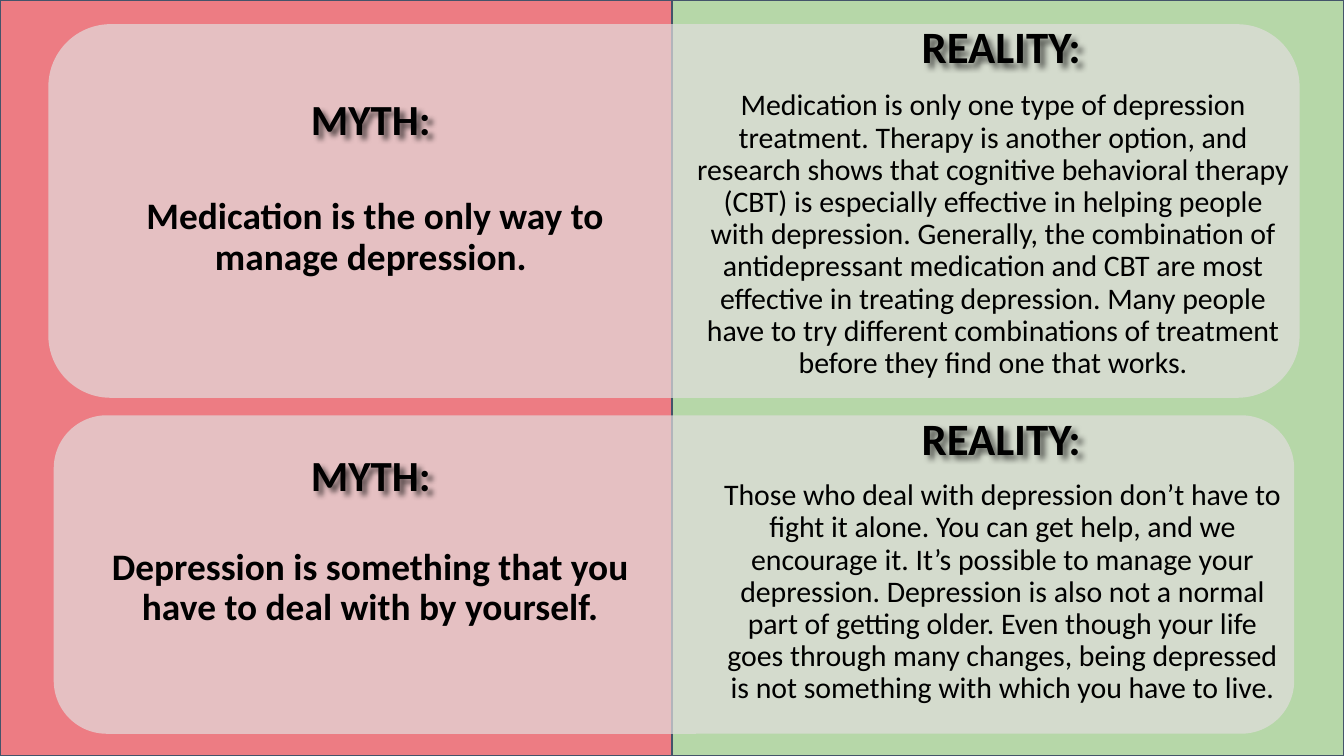
import pptx
import pptx.util
import pptx.dml.color
import pptx.enum.shapes
import pptx.enum.text
import pptx.oxml
import pptx.oxml.ns

Inches, Pt = pptx.util.Inches, pptx.util.Pt
SHAPE = pptx.enum.shapes.MSO_SHAPE
NS = pptx.oxml.ns.nsdecls("a")


def rgb(value):
    return pptx.dml.color.RGBColor.from_string(value)


def write(sp, box, text, size, bold, spacing, margin=0):
    sp.left, sp.top, sp.width, sp.height = [Inches(v) for v in box]
    tf = sp.text_frame
    tf.word_wrap = True
    tf.auto_size = pptx.enum.text.MSO_AUTO_SIZE.NONE
    tf.vertical_anchor = pptx.enum.text.MSO_ANCHOR.TOP
    tf.margin_left = tf.margin_right = Inches(0.07)
    tf.margin_top = tf.margin_bottom = Inches(0.04)
    p = tf.paragraphs[0]
    pPr = p._p.get_or_add_pPr()
    pPr.set("marL", str(Inches(margin)))
    pPr.set("indent", "0")
    pPr.append(pptx.oxml.parse_xml(f"<a:buNone {NS}/>"))
    p.alignment = pptx.enum.text.PP_ALIGN.CENTER
    p.line_spacing = spacing
    p.space_before = Pt(0)
    r = p.add_run()
    r.text = text
    r.font.name = "Calibri"
    r.font.size = Pt(size)
    r.font.bold = bold
    r.font.color.rgb = rgb("000000")


# Widescreen slide, 16:9
prs = pptx.Presentation()
prs.slide_width = Inches(10)
prs.slide_height = Inches(10 * 9 / 16)
s = prs.slides.add_slide(prs.slide_layouts[4])  # Comparison
title = s.shapes.title._element
title.getparent().remove(title)

# Coloured halves: reality on the right, myth on the left
for left, color in ((5, "B6D7A8"), (0, "ED7C83")):
    sp = s.shapes.add_shape(SHAPE.RECTANGLE, Inches(left), 0, Inches(5), prs.slide_height)
    sp.shadow.inherit = False
    sp.fill.solid()
    sp.fill.fore_color.rgb = rgb(color)
    sp.line.color.rgb = rgb("44546A")
    sp.line.width = Pt(0.75)

# Each row: card, myth heading top, then myth and reality text with their boxes
rows = [
    ((0.36, 0.18, 9.31, 2.78), 0.72,
     (0.76, 1.43, 4, 0.8), " Medication is the only way to manage depression.",
     (4.92, 0.63, 4.75, 2.25),
     "Medication is only one type of depression treatment. Therapy is another option, "
     "and research shows that cognitive behavioral therapy (CBT) is especially effective "
     "in helping people with depression. Generally, the combination of antidepressant "
     "medication and CBT are most effective in treating depression. Many people have to "
     "try different combinations of treatment before they find one that works."),
    ((0.4, 3.09, 9.23, 2.37), 3.37,
     (0.6, 4.04, 4.31, 0.8),
     "Depression is something that you have to deal with by yourself.",
     (5.09, 3.53, 4.55, 1.9),
     "Those who deal with depression don’t have to fight it alone. You can get help, and "
     "we encourage it. It’s possible to manage your depression. Depression is also not a "
     "normal part of getting older. Even though your life goes through many changes, being "
     "depressed is not something with which you have to live."),
]
bodies = iter(list(s.placeholders))

for card, myth_top, myth_box, myth, reality_box, reality in rows:
    # Translucent rounded card
    sp = s.shapes.add_shape(SHAPE.ROUNDED_RECTANGLE, *[Inches(v) for v in card])
    sp.shadow.inherit = False
    sp.fill.solid()
    sp.fill.fore_color.rgb = rgb("E2DEDE")
    clr = sp._element.spPr.find(".//" + pptx.oxml.ns.qn("a:srgbClr"))
    clr.append(pptx.oxml.parse_xml(f'<a:alpha {NS} val="70000"/>'))
    sp.line.fill.background()

    # Body placeholders, raised above the card
    for box, text, size, bold, margin in ((myth_box, myth, 20, True, 0),
                                          (reality_box, reality, 16, False, 0.19)):
        sp = next(bodies)
        s.shapes._spTree.append(sp._element)
        write(sp, box, text, size, bold, 0.9, margin)

    # Headings with a soft shadow
    for box, text, size, margin in (((0.76, myth_top, 4, 0.51), "MYTH:", 23, 0),
                                    ((5.2, card[1], 4.31, 0.61), "REALITY:", 24, 0.19)):
        sp = s.shapes.add_textbox(0, 0, 0, 0)
        write(sp, box, text, size, True, 0.8, margin)
        sp._element.spPr.append(pptx.oxml.parse_xml(
            f'<a:effectLst {NS}><a:outerShdw blurRad="38100" dist="38100" dir="2700000">'
            '<a:srgbClr val="000000"><a:alpha val="60000"/></a:srgbClr>'
            '</a:outerShdw></a:effectLst>'))

prs.save("out.pptx")
